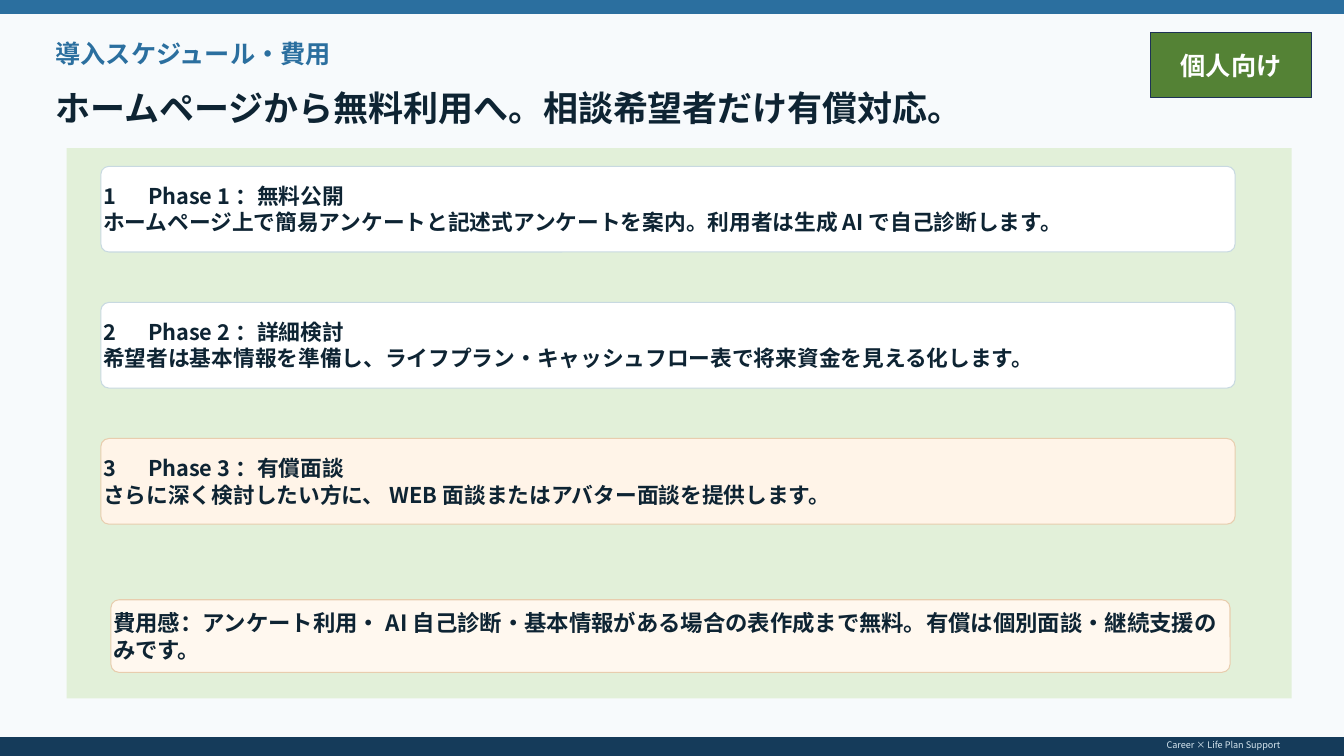
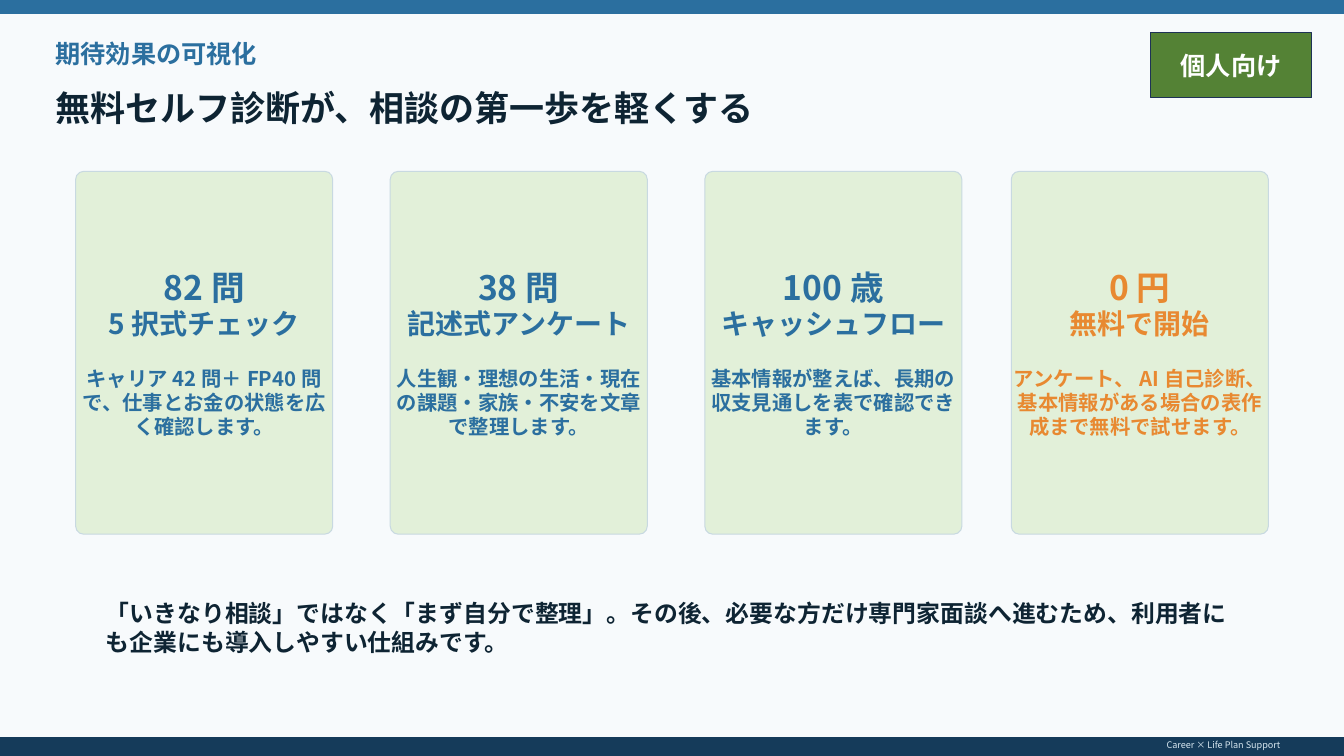
from collections import namedtuple

from lxml.etree import SubElement
from pptx import Presentation
from pptx.dml.color import RGBColor
from pptx.enum.shapes import MSO_SHAPE as Shape
from pptx.enum.text import MSO_ANCHOR as Anchor, PP_ALIGN as Align
from pptx.oxml.ns import qn
from pptx.util import Inches, Pt

Box = namedtuple("Box", "left top width height")

# Shared look
FONT = "Noto Sans CJK JP"
PAPER = RGBColor(0xF7, 0xFA, 0xFC)
WHITE = RGBColor(0xFF, 0xFF, 0xFF)
INK = RGBColor(0x0E, 0x24, 0x33)
BLUE = RGBColor(0x2B, 0x6F, 0x9F)
NAVY = RGBColor(0x15, 0x3B, 0x5A)
ORANGE = RGBColor(0xE8, 0x89, 0x31)
PALE_GREEN = RGBColor(0xE2, 0xF0, 0xD9)
GREEN = RGBColor(0x54, 0x82, 0x35)
BADGE_EDGE = RGBColor(0x1E, 0x32, 0x56)
PALE_BLUE = RGBColor(0xD7, 0xE7, 0xF0)
BLUE_EDGE = RGBColor(0xC8, 0xD9, 0xE1)
PEACH = RGBColor(0xFF, 0xF4, 0xE8)
CREAM = RGBColor(0xFF, 0xF8, 0xEF)
PEACH_EDGE = RGBColor(0xE8, 0xCD, 0xAE)

PAGE = Box(0, 0, 13.33, 7.5)
CORNER = 0.08
FRAME = dict(word_wrap=True, vertical_anchor=Anchor.MIDDLE,
             margin_left=0, margin_top=0, margin_right=0, margin_bottom=0)

PHASES = [
    ("1　Phase 1：無料公開",
     "ホームページ上で簡易アンケートと記述式アンケートを案内。利用者は生成AIで自己診断します。",
     WHITE, BLUE_EDGE),
    ("2　Phase 2：詳細検討",
     "希望者は基本情報を準備し、ライフプラン・キャッシュフロー表で将来資金を見える化します。",
     WHITE, BLUE_EDGE),
    ("3　Phase 3：有償面談",
     "さらに深く検討したい方に、WEB面談またはアバター面談を提供します。",
     PEACH, PEACH_EDGE),
]
COST = "費用感：アンケート利用・AI自己診断・基本情報がある場合の表作成まで無料。有償は個別面談・継続支援のみです。"

BENEFITS = [
    (0.75, "82問", "5択式チェック",
     "キャリア42問＋FP40問で、仕事とお金の状態を広く確認します。", BLUE),
    (3.87, "38問", "記述式アンケート",
     "人生観・理想の生活・現在の課題・家族・不安を文章で整理します。", BLUE),
    (6.99, "100歳", "キャッシュフロー",
     "基本情報が整えば、長期の収支見通しを表で確認できます。", BLUE),
    (10.03, "0円", "無料で開始",
     "アンケート、AI自己診断、基本情報がある場合の表作成まで無料で試せます。", ORANGE),
]
CLOSING = ("「いきなり相談」ではなく「まず自分で整理」。その後、必要な方だけ専門家面談へ"
           "進むため、利用者にも企業にも導入しやすい仕組みです。")


def set_all(target, values):
    for name, value in values.items():
        setattr(target, name, value)


def write(holder, lines, color, align=Align.LEFT, bold=True):
    """Fill a shape with (text, size, space before) lines."""
    frame = holder.text_frame
    set_all(frame, FRAME)
    for index, (text, size, before) in enumerate(lines):
        paragraph = frame.paragraphs[0] if index == 0 else frame.add_paragraph()
        paragraph.alignment = align
        if before:
            paragraph.space_before = Pt(before)
        run = paragraph.add_run()
        run.text = text
        set_all(run.font, dict(name=FONT, size=Pt(size), bold=bold))
        run.font.color.rgb = color
        # Japanese glyphs take the East Asian typeface
        SubElement(run.font._element, qn("a:ea"), typeface=FONT)


def add_label(slide, box, text, size, color, **style):
    label = slide.shapes.add_textbox(*map(Inches, box))
    write(label, [(text, size, 0)], color, **style)


def add_block(slide, box, fill, edge=None, weight=1, rounded=False):
    kind = Shape.ROUNDED_RECTANGLE if rounded else Shape.RECTANGLE
    block = slide.shapes.add_shape(kind, *map(Inches, box))
    block.shadow.inherit = False
    block.fill.solid()
    block.fill.fore_color.rgb = fill
    if rounded:
        block.adjustments[0] = CORNER / min(box.width, box.height)
    if edge is None:
        block.line.fill.background()
    else:
        block.line.color.rgb = edge
        block.line.width = Pt(weight)
    return block


def add_card(slide, box, fill, edge, lines, color=INK, align=Align.LEFT):
    card = add_block(slide, box, fill, edge, 0.75, rounded=True)
    write(card, lines, color, align)


def start_slide(deck, topic, headline):
    """Background, bands, headings, badge and footer of every slide."""
    slide = deck.slides.add_slide(deck.slide_layouts[6])
    slide.background.fill.solid()
    slide.background.fill.fore_color.rgb = PAPER
    add_block(slide, PAGE._replace(height=0.13), BLUE, BLUE)
    add_block(slide, PAGE._replace(top=7.32, height=0.18), NAVY, NAVY)
    add_label(slide, Box(0.55, 0.35, 5.8, 0.35), topic, 18, BLUE)
    add_label(slide, Box(0.55, 0.82, 12, 0.5), headline, 25, INK)
    add_label(slide, Box(9.6, 7.34, 3.1, 0.1), "Career × Life Plan Support",
              6.5, PALE_BLUE, align=Align.RIGHT, bold=False)
    badge = add_block(slide, Box(11.41, 0.32, 1.6, 0.65), GREEN, BADGE_EDGE)
    write(badge, [("個人向け", 18, 0)], WHITE, Align.CENTER)
    return slide


def add_schedule(slide, panel):
    """Green panel with the phases and the cost note."""
    add_block(slide, panel, PALE_GREEN)
    left, top = panel.left + 0.34, panel.top + 0.18
    for index, (phase, detail, fill, edge) in enumerate(PHASES):
        add_card(slide, Box(left, top + index * 1.35, 11.25, 0.85), fill, edge,
                 [(phase, 15.5, 0), (detail, 15.5, 0)])
    add_card(slide, Box(left + 0.1, top + 4.3, 11.1, 0.72), CREAM, PEACH_EDGE,
             [(COST, 16, 0)])


def add_benefits(slide, row):
    """Row of benefit cards, each as wide as a card of the row."""
    for left, figure, name, detail, color in BENEFITS:
        add_card(slide, row._replace(left=left), PALE_GREEN, BLUE_EDGE,
                 [(figure, 24, 0), (name, 20, 0), (detail, 14.5, 18)],
                 color, Align.CENTER)


def main():
    deck = Presentation()
    deck.slide_width, deck.slide_height = Inches(PAGE.width), Inches(PAGE.height)

    schedule = start_slide(deck, "導入スケジュール・費用",
                           "ホームページから無料利用へ。相談希望者だけ有償対応。")
    add_schedule(schedule, Box(0.66, 1.47, 12.15, 5.46))

    effects = start_slide(deck, "期待効果の可視化",
                          "無料セルフ診断が、相談の第一歩を軽くする")
    add_benefits(effects, Box(0.75, 1.7, 2.55, 3.6))
    add_label(effects, Box(1.05, 5.9, 11.2, 0.65), CLOSING, 17, INK)

    deck.save("out.pptx")


if __name__ == "__main__":
    main()
